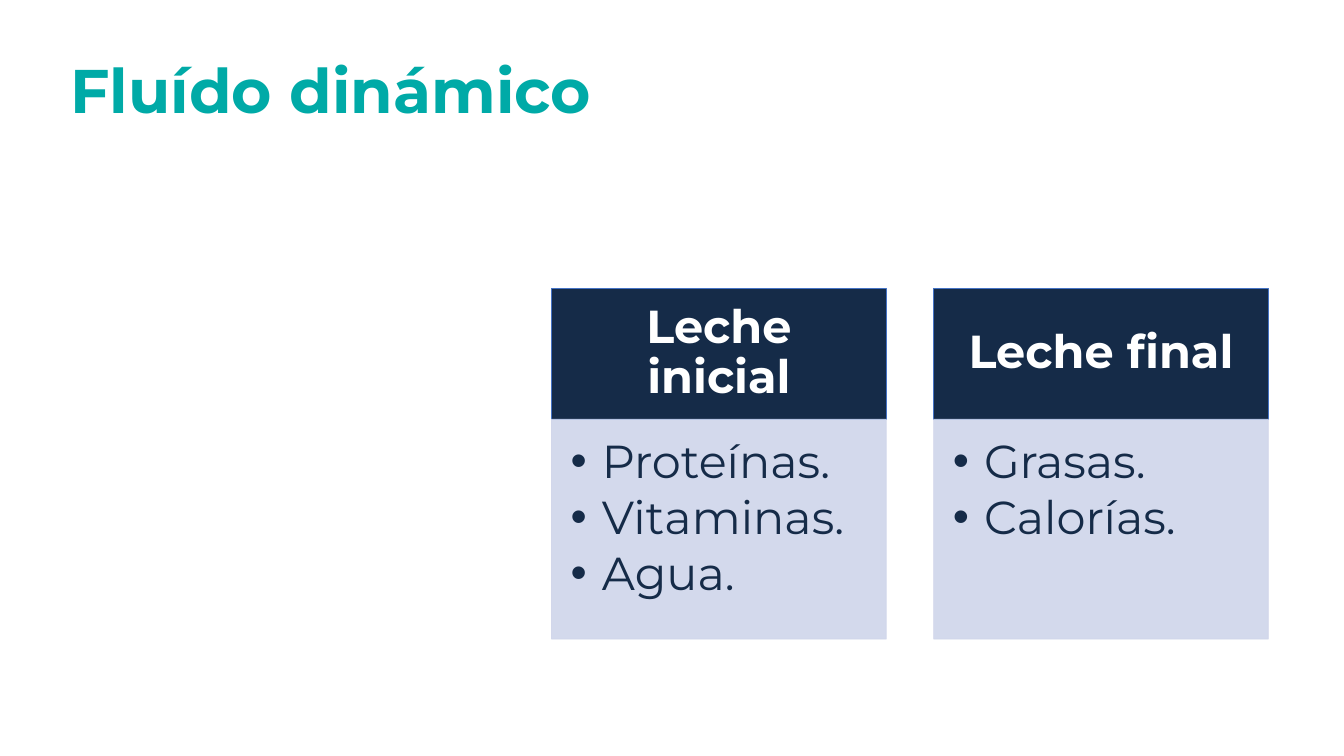
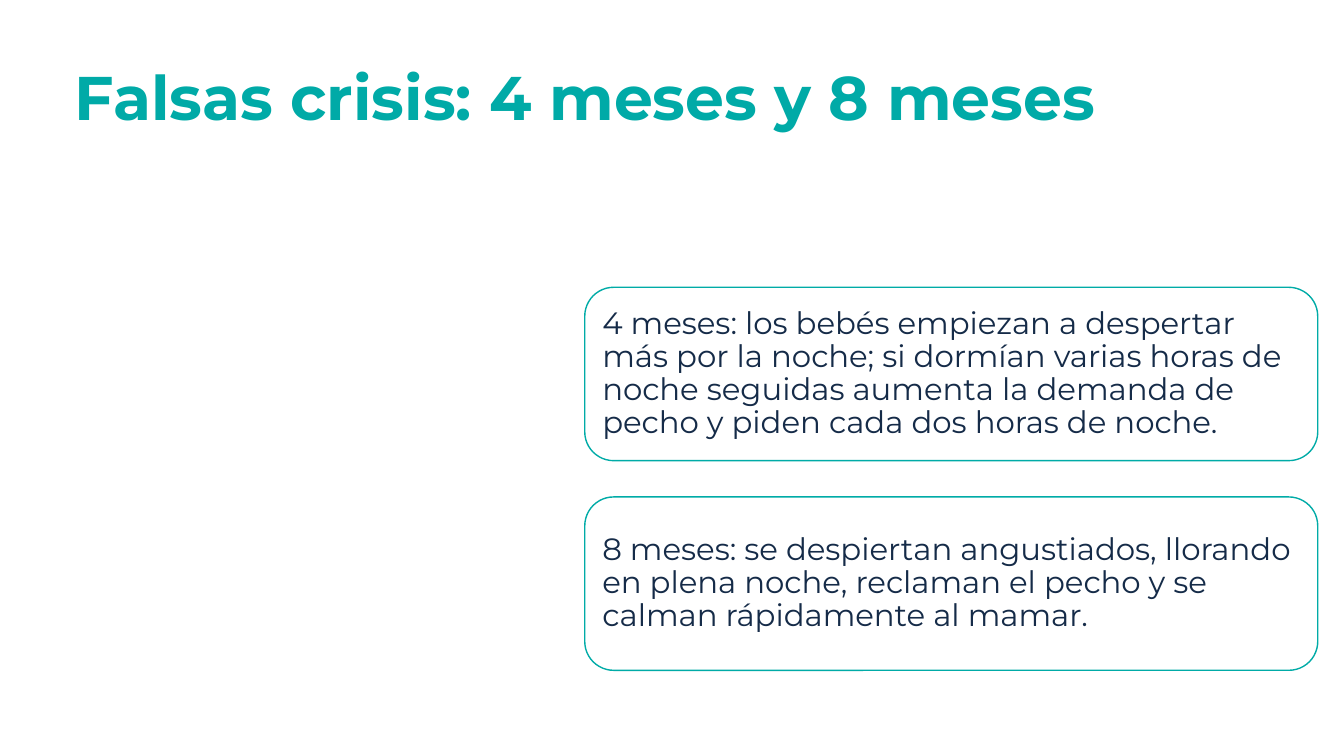
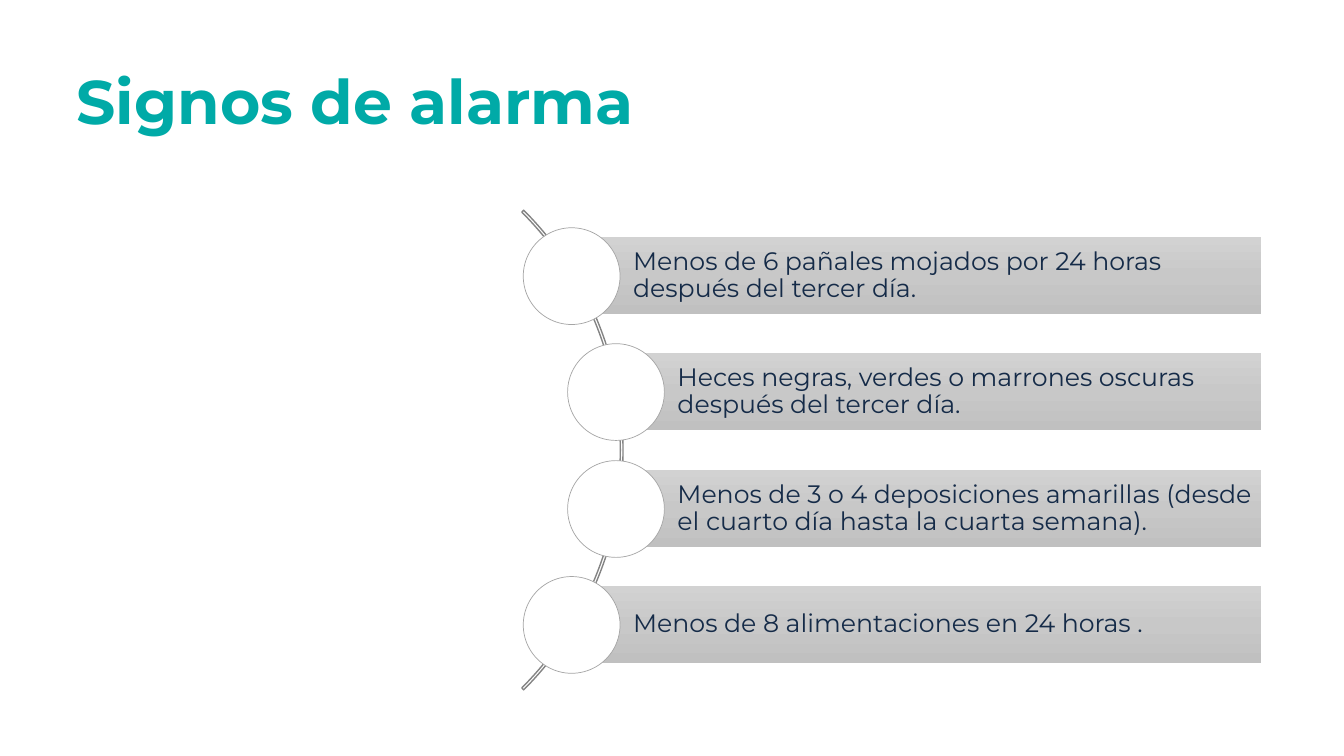
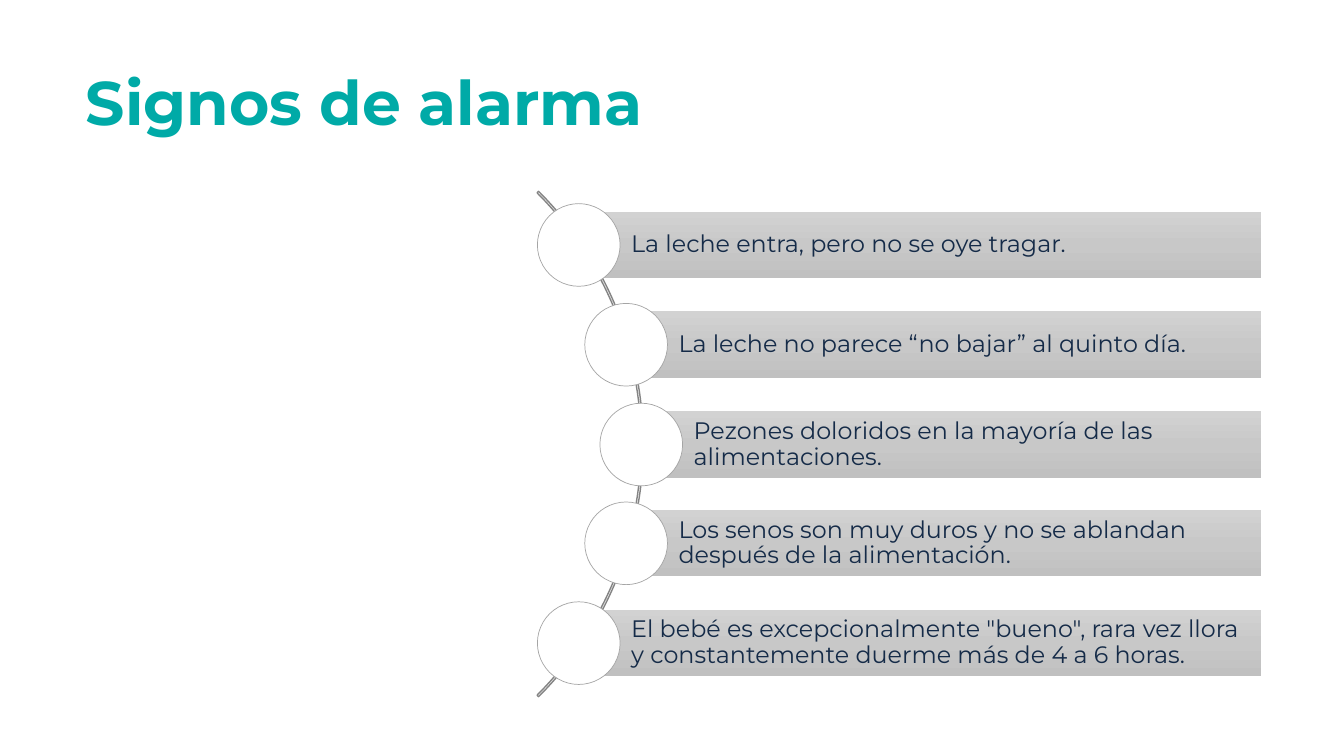
from copy import deepcopy
from dataclasses import dataclass

from pptx import Presentation
from pptx.dml.color import RGBColor
from pptx.enum.shapes import MSO_SHAPE
from pptx.enum.text import MSO_ANCHOR, MSO_AUTO_SIZE, PP_ALIGN
from pptx.oxml.ns import qn
from pptx.oxml.xmlchemy import OxmlElement
from pptx.presentation import Presentation as Deck
from pptx.shapes.autoshape import Shape
from pptx.slide import Slide
from pptx.util import Emu, Pt

# Shared style: 100 px to the inch
SCALE = 9144
FONT = "Montserrat"
NAVY, TEAL, EDGE, WHITE = "152B48", "00AAA7", "00ABA7", "FFFFFF"
BLUE, PALE, GREY, RING = "4472C4", "CFD5EA", "848484", "A5A5A5"
SHADES = ((0, "D2D2D2"), (0.5, "C8C8C8"), (1, "C0C0C0"))


@dataclass(frozen=True)
class Box:
    left: int
    top: int
    width: int
    height: int


@dataclass(frozen=True)
class Style:
    size: int
    color: str = NAVY
    bold: bool = False
    align: PP_ALIGN = PP_ALIGN.LEFT
    anchor: MSO_ANCHOR = MSO_ANCHOR.MIDDLE
    inset: tuple[int, int, int, int] = (10, 5, 10, 5)
    bullet: bool = False


@dataclass(frozen=True)
class Card:
    left: int
    head: str
    items: tuple[str, ...]


@dataclass(frozen=True)
class Sign:
    left: int
    text: str


@dataclass(frozen=True)
class Fan:
    """Bars fanned along an arc, each with a disc at its left end."""
    arc: Box
    band: float
    first: int
    last: int
    height: int
    disc: int
    style: Style
    signs: tuple[Sign, ...]


TITLE = Style(44, TEAL, True)
HEAD = Style(33, WHITE, True, PP_ALIGN.CENTER, inset=(26, 15, 26, 15))
LIST = Style(33, anchor=MSO_ANCHOR.TOP, inset=(19, 19, 26, 29), bullet=True)
NOTE = Style(22, inset=(9, 9, 9, 9))

# Slide content
CARDS = (
    Card(547, "Leche inicial", ("Proteínas.", "Vitaminas.", "Agua.")),
    Card(926, "Leche final", ("Grasas.", "Calorías.")),
)
NOTES = (
    "4 meses: los bebés empiezan a despertar más por la noche; si dormían varias "
    "horas de noche seguidas aumenta la demanda de pecho y piden cada dos horas "
    "de noche.",
    "8 meses: se despiertan angustiados, llorando en plena noche, reclaman el "
    "pecho y se calman rápidamente al mamar.",
)
DIAPERS = Fan(
    Box(-55, 110, 673, 673), 0.004, 235, 581, 77, 96,
    Style(18, inset=(61, 5, 5, 5)),
    (
        Sign(567, "Menos de 6 pañales mojados por 24 horas después del tercer día."),
        Sign(611, "Heces negras, verdes o marrones oscuras después del tercer día."),
        Sign(611, "Menos de 3 o 4 deposiciones amarillas (desde el cuarto día "
                  "hasta la cuarta semana)."),
        Sign(567, "Menos de 8 alimentaciones en 24 horas ."),
    ),
)
FEEDING = Fan(
    Box(-71, 86, 709, 709), 0.003, 210, 605, 66, 82,
    Style(17, inset=(52, 5, 5, 5)),
    (
        Sign(574, "La leche entra, pero no se oye tragar."),
        Sign(621, "La leche no parece “no bajar” al quinto día."),
        Sign(636, "Pezones doloridos en la mayoría de las alimentaciones."),
        Sign(621, "Los senos son muy duros y no se ablandan después de la "
                  "alimentación."),
        Sign(574, 'El bebé es excepcionalmente "bueno", rara vez llora y '
                  "constantemente duerme más de 4 a 6 horas."),
    ),
)
BAR_END = 1251


# Helpers
def px(count: int) -> Emu:
    return Emu(count * SCALE)


def rgb(code: str) -> RGBColor:
    return RGBColor.from_string(code)


def add_bullet(para) -> None:
    props = para._p.get_or_add_pPr()
    props.set("marL", str(px(31)))
    props.set("indent", str(px(-31)))
    for tag, key, value in (("a:buFont", "typeface", "Arial"),
                            ("a:buChar", "char", "•")):
        mark = OxmlElement(tag)
        mark.set(key, value)
        props.append(mark)


def write(shape: Shape, lines: tuple[str, ...], style: Style) -> None:
    frame = shape.text_frame
    frame.text = "\n".join(lines)
    frame.word_wrap = True
    frame.auto_size = MSO_AUTO_SIZE.NONE
    frame.vertical_anchor = style.anchor
    (frame.margin_left, frame.margin_top,
     frame.margin_right, frame.margin_bottom) = map(px, style.inset)
    for para in frame.paragraphs:
        if style.bullet:
            add_bullet(para)
            para.space_after = Pt(4.5)
        para.alignment = style.align
        para.line_spacing = 0.9
        for run in para.runs:
            font = run.font
            font.name, font.size, font.bold = FONT, Pt(style.size), style.bold
            font.color.rgb = rgb(style.color)


def draw(slide: Slide, kind: MSO_SHAPE, box: Box, fill: str | None = None,
         line: str | None = None, weight: float = 0.5) -> Shape:
    shape = slide.shapes.add_shape(
        kind, px(box.left), px(box.top), px(box.width), px(box.height))
    shape.shadow.inherit = False
    if fill:
        shape.fill.solid()
        shape.fill.fore_color.rgb = rgb(fill)
    else:
        shape.fill.background()
    if line:
        shape.line.color.rgb = rgb(line)
        shape.line.width = Pt(weight)
    else:
        shape.line.fill.background()
    return shape


def fade(shape: Shape, percent: int) -> None:
    for color in shape._element.spPr.iter(qn("a:srgbClr")):
        alpha = OxmlElement("a:alpha")
        alpha.set("val", str(percent * 1000))
        color.append(alpha)


def shade(shape: Shape) -> None:
    shape.fill.gradient()
    shape.fill.gradient_angle = 270
    stops = next(shape._element.spPr.iter(qn("a:gsLst")))
    stops.append(deepcopy(stops[-1]))
    for stop, (place, code) in zip(shape.fill.gradient_stops, SHADES):
        stop.position = place
        stop.color.rgb = rgb(code)


def add_slide(deck: Deck, text: str, left: int, top: int) -> Slide:
    slide = deck.slides.add_slide(deck.slide_layouts[5])
    title = slide.shapes.title
    title.left, title.top = px(left), px(top)
    title.width, title.height = px(1150), px(145)
    write(title, (text,), TITLE)
    return slide


# Slide parts
def add_card(slide: Slide, card: Card) -> None:
    head = draw(slide, MSO_SHAPE.RECTANGLE, Box(card.left, 286, 332, 130), NAVY, BLUE)
    write(head, (card.head,), HEAD)
    body = draw(slide, MSO_SHAPE.RECTANGLE, Box(card.left, 416, 332, 218), PALE, PALE)
    fade(body, 90)
    write(body, card.items, LIST)


def add_fan(slide: Slide, fan: Fan) -> None:
    arc = draw(slide, MSO_SHAPE.BLOCK_ARC, fan.arc, line=GREY, weight=1)
    for index, value in enumerate((189, 27, fan.band)):
        arc.adjustments[index] = value
    step = (fan.last - fan.first) / (len(fan.signs) - 1)
    for row, sign in enumerate(fan.signs):
        top = round(fan.first + row * step)
        bar = draw(slide, MSO_SHAPE.RECTANGLE,
                   Box(sign.left, top, BAR_END - sign.left, fan.height))
        shade(bar)
        write(bar, (sign.text,), fan.style)
        draw(slide, MSO_SHAPE.OVAL,
             Box(sign.left - fan.disc // 2, top - (fan.disc - fan.height) // 2,
                 fan.disc, fan.disc), WHITE, RING)


def main() -> None:
    deck = Presentation()
    deck.slide_width, deck.slide_height = px(1333), px(750)

    # Milk cards
    slide = add_slide(deck, "Fluído dinámico", 60, 20)
    for card in CARDS:
        add_card(slide, card)

    # False crises
    slide = add_slide(deck, "Falsas crisis: 4 meses y 8 meses", 64, 27)
    for row, text in enumerate(NOTES):
        note = draw(slide, MSO_SHAPE.ROUNDED_RECTANGLE,
                    Box(580, 285 + row * 208, 727, 172), WHITE, EDGE, 1)
        write(note, (text,), NOTE)

    # Warning signs
    for fan, left, top in ((DIAPERS, 66, 31), (FEEDING, 75, 32)):
        add_fan(add_slide(deck, "Signos de alarma", left, top), fan)

    deck.save("out.pptx")


if __name__ == "__main__":
    main()
